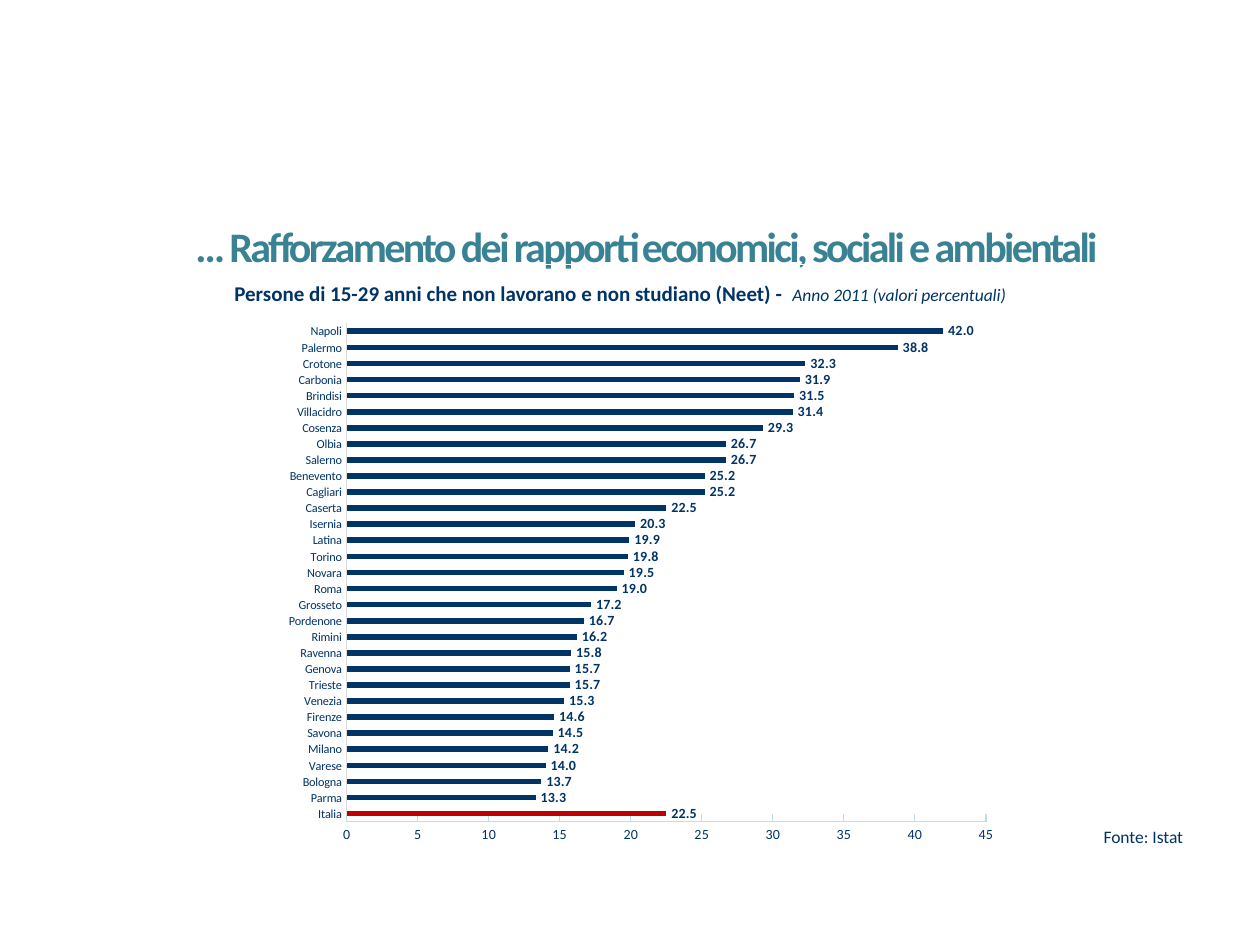
from lxml import etree
from pptx import Presentation
from pptx.chart.data import CategoryChartData
from pptx.dml.color import RGBColor
from pptx.enum import chart as charts, text
from pptx.oxml import parse_xml
from pptx.oxml.ns import nsdecls, qn
from pptx.util import Pt

TITLE = "… Rafforzamento dei rapporti economici, sociali e ambientali "
HEADING = "Persone di 15-29 anni che non lavorano e non studiano (Neet) -  "
HEADING_NOTE = "Anno 2011 (valori percentuali)"
SOURCE = "Fonte: Istat"
NEET_RATES = [
    ("Italia", 22.5), ("Parma", 13.3), ("Bologna", 13.7), ("Varese", 14),
    ("Milano", 14.2), ("Savona", 14.5), ("Firenze", 14.6), ("Venezia", 15.3),
    ("Trieste", 15.7), ("Genova", 15.7), ("Ravenna", 15.8), ("Rimini", 16.2),
    ("Pordenone", 16.7), ("Grosseto", 17.2), ("Roma", 19), ("Novara", 19.5),
    ("Torino", 19.8), ("Latina", 19.9), ("Isernia", 20.3), ("Caserta", 22.5),
    ("Cagliari", 25.2), ("Benevento", 25.2), ("Salerno", 26.7), ("Olbia", 26.7),
    ("Cosenza", 29.3), ("Villacidro", 31.4), ("Brindisi", 31.5),
    ("Carbonia", 31.9), ("Crotone", 32.3), ("Palermo", 38.8), ("Napoli", 42),
]
HIGHLIGHT = "Italia"

THEME = {
    "font": "Calibri", "chart_font": "Arial",
    "teal": "388294", "navy": "003366", "red": "C00000", "black": "000000",
    "category_line": "D9D9D9", "value_line": "BBE0E3",
    "title": 24, "heading": 12, "small": 10, "axis": 8, "category": 7,
}
# left, top, width, height in points
BOXES = {
    "title": (42.5, 122.4, 657.4, 36),
    "heading": (133.2, 151.2, 459.4, 24.5),
    "source": (623.5, 468.7, 87.8, 19.4),
    "chart": (156.2, 178.6, 419.8, 309.6),
}
PLOT_AREA = {"x": 0.1, "y": 0.02, "w": 0.87, "h": 0.92}


def place(name):
    return [Pt(length) for length in BOXES[name]]


def set_font(font, size, color="navy", family="font", **flags):
    values = {"name": THEME[family], "size": Pt(THEME[size]), **flags}
    for attribute, value in values.items():
        setattr(font, attribute, value)
    font.color.rgb = RGBColor.from_string(THEME[color])


def add_run(paragraph, words, size, color="navy", **flags):
    run = paragraph.add_run()
    run.text = words
    set_font(run.font, size, color, **flags)
    return run


def add_title(slide):
    title = slide.shapes.title
    title.left, title.top, title.width, title.height = place("title")
    frame = title.text_frame
    frame.word_wrap = True
    frame.auto_size = text.MSO_AUTO_SIZE.NONE
    frame.vertical_anchor = text.MSO_ANCHOR.TOP
    paragraph = frame.paragraphs[0]
    paragraph.alignment = text.PP_ALIGN.CENTER
    run = add_run(paragraph, TITLE, "title", "teal", bold=True)
    run.font._element.set("spc", "-150")


def add_heading(slide):
    table = slide.shapes.add_table(1, 1, *place("heading")).table
    table.first_row = table.horz_banding = False
    cell = table.cell(0, 0)
    cell.fill.background()
    cell.vertical_anchor = text.MSO_ANCHOR.BOTTOM
    cell.margin_left = cell.margin_right = cell.margin_top = Pt(0.72)
    cell.margin_bottom = Pt(0)
    paragraph = cell.text_frame.paragraphs[0]
    add_run(paragraph, HEADING, "heading", bold=True)
    add_run(paragraph, HEADING_NOTE, "small", bold=False, italic=True)


def add_source(slide):
    frame = slide.shapes.add_textbox(*place("source")).text_frame
    frame.word_wrap = True
    add_run(frame.paragraphs[0], SOURCE, "small")


def fix_plot_area(chart):
    layout = parse_xml(
        f'<c:layout {nsdecls("c")}><c:manualLayout><c:layoutTarget val="inner"/>'
        '<c:xMode val="edge"/><c:yMode val="edge"/></c:manualLayout></c:layout>')
    for key, share in PLOT_AREA.items():
        etree.SubElement(layout[0], qn(f"c:{key}"), val=str(share))
    plot_area = chart._chartSpace.chart.plotArea
    for previous in plot_area.findall(qn("c:layout")):
        plot_area.remove(previous)
    plot_area.insert(0, layout)


def format_axis(axis, size, line, tick):
    axis.has_major_gridlines = False
    axis.major_tick_mark = tick
    axis.minor_tick_mark = charts.XL_TICK_MARK.NONE
    axis.format.line.color.rgb = RGBColor.from_string(THEME[line])
    axis.format.line.width = Pt(0.75)
    set_font(axis.tick_labels.font, size, bold=False)


def format_series(plot):
    plot.gap_width = 182
    plot.vary_by_categories = False
    series = plot.series[0]
    highlight = [name for name, _ in NEET_RATES].index(HIGHLIGHT)
    for item, color in ((series, "navy"), (series.points[highlight], "red")):
        item.format.fill.solid()
        item.format.fill.fore_color.rgb = RGBColor.from_string(THEME[color])
    labels = series.data_labels
    options = {"show_value": True, "number_format": "#,##0.0",
               "number_format_is_linked": False,
               "position": charts.XL_LABEL_POSITION.OUTSIDE_END}
    for attribute, value in options.items():
        setattr(labels, attribute, value)
    set_font(labels.font, "axis", bold=True)


def add_chart(slide):
    data = CategoryChartData()
    data.categories = [name for name, _ in NEET_RATES]
    data.add_series("Series 1", [rate for _, rate in NEET_RATES])
    chart = slide.shapes.add_chart(
        charts.XL_CHART_TYPE.BAR_CLUSTERED, *place("chart"), data).chart
    chart.has_legend = chart.has_title = False
    set_font(chart.font, "small", "black", "chart_font")
    fix_plot_area(chart)
    format_series(chart.plots[0])

    category, value = chart.category_axis, chart.value_axis
    format_axis(category, "category", "category_line", charts.XL_TICK_MARK.NONE)
    format_axis(value, "axis", "value_line", charts.XL_TICK_MARK.INSIDE)
    show_every_label = parse_xml(f'<c:tickLblSkip {nsdecls("c")} val="1"/>')
    category._element.find(qn("c:noMultiLvlLbl")).addprevious(show_every_label)
    scale = {"minimum_scale": 0, "maximum_scale": 45, "major_unit": 5}
    for attribute, number in scale.items():
        setattr(value, attribute, number)
    value.tick_labels.number_format = "#,##0"
    value.tick_labels.number_format_is_linked = False


def main():
    presentation = Presentation()
    presentation.slide_width, presentation.slide_height = Pt(720), Pt(540)
    slide = presentation.slides.add_slide(presentation.slide_layouts[5])
    for add_part in (add_title, add_heading, add_source, add_chart):
        add_part(slide)
    presentation.save("out.pptx")


if __name__ == "__main__":
    main()
